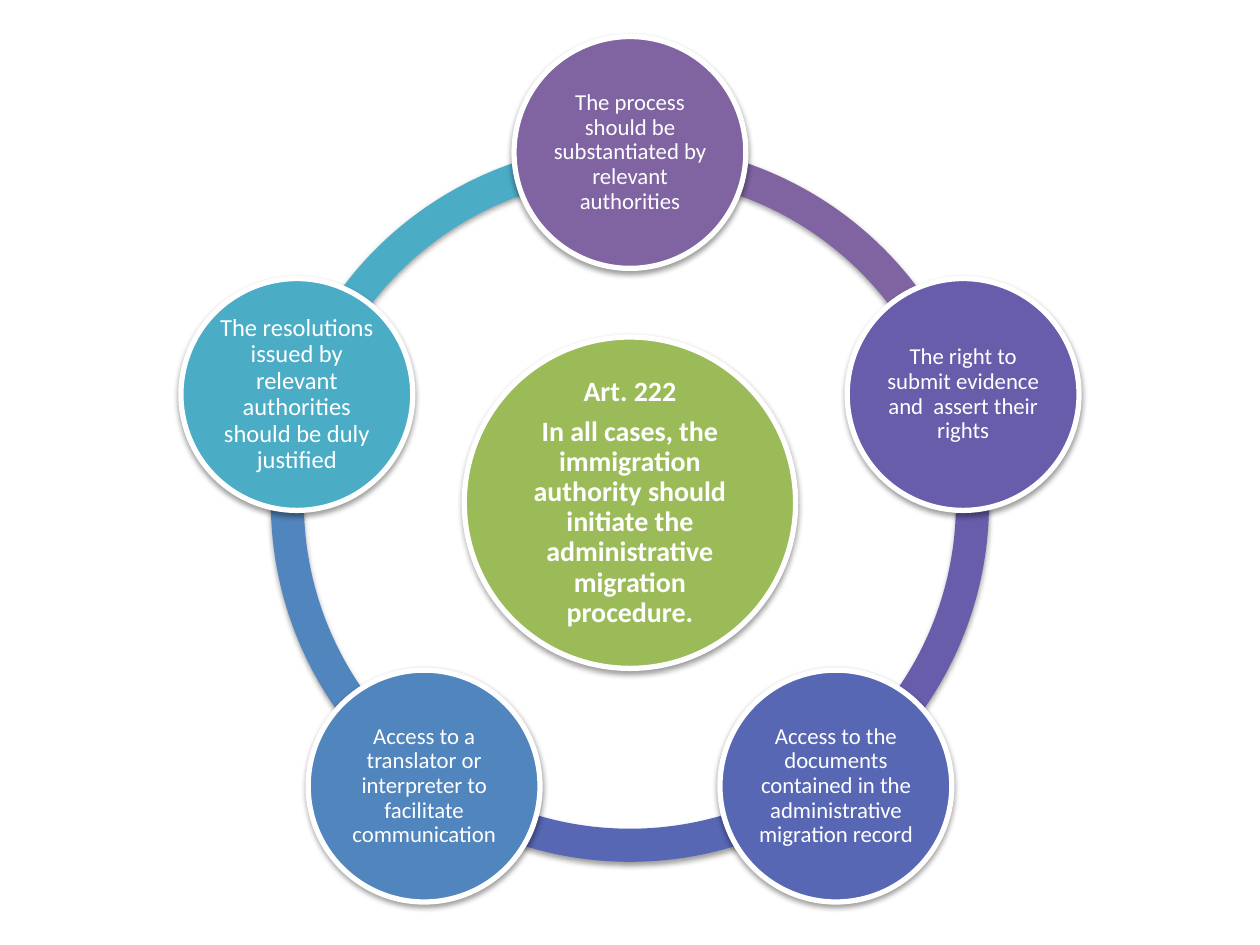
import math
from dataclasses import dataclass

from lxml import etree
from pptx import Presentation
from pptx.dml.color import RGBColor
from pptx.enum import shapes, text
from pptx.oxml import ns
from pptx.util import Inches, Pt


@dataclass(frozen=True)
class Theme:
    font: str = "Calibri"
    white: str = "FFFFFF"
    center: str = "9BBB59"
    shadow: str = "000000"
    center_size: int = 16
    right_size: int = 13
    justified_size: int = 14
    outline: int = 3


@dataclass(frozen=True)
class Disc:
    wording: str
    color: str
    size: int
    diameter: float = 1.84
    bold: bool = False


THEME = Theme()
CENTER_X, CENTER_Y = 5, 3.99
ORBIT = 2.78
RING_DIAMETER = 5.7
RING_THICKNESS = 0.046
TOP_ANGLE = 270

ARTICLE = Disc(
    "Art. 222\nIn all cases, the immigration authority should initiate "
    "the administrative migration procedure.",
    THEME.center, THEME.center_size, diameter=2.63, bold=True)

RIGHTS = [
    Disc("The process should be substantiated by relevant authorities",
         "8064A2", THEME.right_size),
    Disc("The right to submit evidence and  assert their rights",
         "685DAB", THEME.right_size),
    Disc("Access to the documents contained in the administrative migration record",
         "5767B4", THEME.right_size),
    Disc("Access to a translator or interpreter to facilitate communication",
         "5185BD", THEME.right_size),
    Disc("The resolutions issued by relevant authorities should be duly justified",
         "4BACC6", THEME.justified_size),
]
STEP = 360 / len(RIGHTS)


def add_soft_shadow(shape) -> None:
    shape.shadow.inherit = False
    effects = shape._element.spPr.find(ns.qn("a:effectLst"))
    outer = etree.SubElement(effects, ns.qn("a:outerShdw"), blurRad="40000",
                             dist="20000", dir="5400000", rotWithShape="0")
    color = etree.SubElement(outer, ns.qn("a:srgbClr"), val=THEME.shadow)
    etree.SubElement(color, ns.qn("a:alpha"), val="38000")


def add_round(slide, kind, x: float, y: float, diameter: float, color: str):
    """Add a filled, shadowed shape of equal sides centred on (x, y)."""
    shape = slide.shapes.add_shape(
        kind, Inches(x - diameter / 2), Inches(y - diameter / 2),
        Inches(diameter), Inches(diameter))
    shape.fill.solid()
    shape.fill.fore_color.rgb = RGBColor.from_string(color)
    shape.line.fill.background()
    add_soft_shadow(shape)
    return shape


def add_arc(slide, start: float, color: str) -> None:
    """Add the ring segment that runs one step clockwise from start degrees."""
    arc = add_round(slide, shapes.MSO_SHAPE.BLOCK_ARC, CENTER_X, CENTER_Y,
                    RING_DIAMETER, color)
    # Angles are stored in 60000ths of a degree, adjustments in 100000ths.
    arc.adjustments[0] = start % 360 * 0.6
    arc.adjustments[1] = (start + STEP) % 360 * 0.6
    arc.adjustments[2] = RING_THICKNESS


def add_disc(slide, disc: Disc, x: float, y: float) -> None:
    circle = add_round(slide, shapes.MSO_SHAPE.OVAL, x, y, disc.diameter, disc.color)
    circle.line.color.rgb = RGBColor.from_string(THEME.white)
    circle.line.width = Pt(THEME.outline)

    frame = circle.text_frame
    frame.text = disc.wording
    frame.word_wrap = True
    frame.vertical_anchor = text.MSO_ANCHOR.MIDDLE
    frame.margin_left = frame.margin_right = Inches(0.02)
    frame.margin_top = frame.margin_bottom = Inches(0.02)
    for paragraph in frame.paragraphs:
        paragraph.alignment = text.PP_ALIGN.CENTER
        paragraph.line_spacing = 0.9
        paragraph.space_after = Pt(disc.size * 0.35)
        for run in paragraph.runs:
            run.font.name = THEME.font
            run.font.size = Pt(disc.size)
            run.font.bold = disc.bold
            run.font.color.rgb = RGBColor.from_string(THEME.white)


def main() -> None:
    deck = Presentation()
    deck.slide_width, deck.slide_height = Inches(10), Inches(7.5)
    slide = deck.slides.add_slide(deck.slide_layouts[6])

    placed = [(TOP_ANGLE + i * STEP, right) for i, right in enumerate(RIGHTS)]
    for angle, right in reversed(placed):
        add_arc(slide, angle, right.color)
    add_disc(slide, ARTICLE, CENTER_X, CENTER_Y)
    for angle, right in placed:
        add_disc(slide, right,
                 CENTER_X + ORBIT * math.cos(math.radians(angle)),
                 CENTER_Y + ORBIT * math.sin(math.radians(angle)))

    deck.save("out.pptx")


if __name__ == "__main__":
    main()
